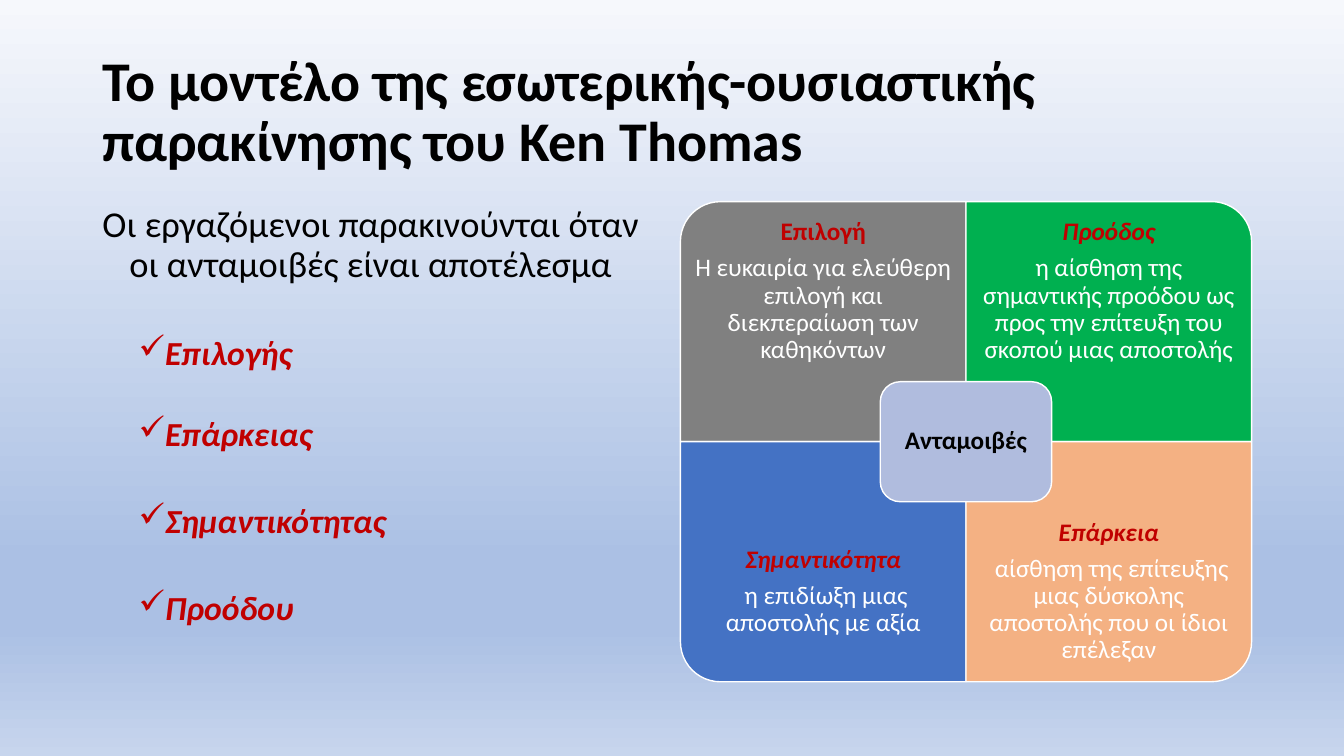
import pptx
import pptx.util
import pptx.dml.color
import pptx.enum.shapes
import pptx.enum.text
import pptx.oxml
import pptx.oxml.ns

Pt = pptx.util.Pt
SHAPE = pptx.enum.shapes.MSO_SHAPE
ALIGN = pptx.enum.text.PP_ALIGN
ANCHOR = pptx.enum.text.MSO_ANCHOR

TITLE = "Το µοντέλο της εσωτερικής-ουσιαστικής παρακίνησης του Ken Thomas"
LEAD = "Οι εργαζόµενοι παρακινούνται όταν οι ανταµοιβές είναι αποτέλεσµα"
ITEMS = [("Επιλογής", 36.4), ("Επάρκειας", 32), ("Σηµαντικότητας", 36.4), ("Προόδου", 36.4)]
HUB = "Ανταμοιβές"
PARTS = [
    ("Επιλογή", "Η ευκαιρία για ελεύθερη επιλογή και διεκπεραίωση των καθηκόντων", False, "808080", 270),
    ("Προόδος", "η αίσθηση της σηµαντικής προόδου ως προς την επίτευξη του σκοπού µιας αποστολής", True, "00B050", 0),
    ("Σηµαντικότητα", " η επιδίωξη µιας αποστολής µε αξία", True, "4472C4", 180),
    ("Επάρκεια", " αίσθηση της επίτευξης µιας δύσκολης αποστολής που οι ίδιοι επέλεξαν", True, "F4B183", 90),
]
THEME = {
    "font": "Calibri", "dark": "000000", "light": "FFFFFF", "red": "C00000", "hub": "B0BCDE",
    "title": 40, "lead": 26, "item": 24, "part": 18,
    "back": [(0, "F6F8FC"), (74, "ABC0E4"), (83, "ABC0E4"), (100, "C7D5ED")],
}
LEFT, TOP, WIDE, HIGH = 486, 144, 204, 171.5


def paint(fill, tone):
    fill.solid()
    fill.fore_color.rgb = pptx.dml.color.RGBColor.from_string(tone)


def write(frame, text, size, tone="dark", bold=False, slant=False,
          align=ALIGN.CENTER, before=0, after=0, mark=None):
    para = frame.paragraphs[0]
    if para.runs:
        para = frame.add_paragraph()
    para.alignment = align
    para.line_spacing = 0.9
    para.space_before, para.space_after = Pt(before), Pt(after)
    run = para.add_run()
    run.text = text
    font = run.font
    font.name, font.size = THEME["font"], Pt(THEME[size])
    font.bold, font.italic = bold, slant
    font.color.rgb = pptx.dml.color.RGBColor.from_string(THEME[tone])
    if mark:
        props = para._p.get_or_add_pPr()
        props.set("marL", str(Pt(54)))
        props.set("indent", str(Pt(-18)))
        bullet = pptx.oxml.parse_xml(f'<a:buChar {pptx.oxml.ns.nsdecls("a")} char="{mark}"/>')
        props.append(bullet)


def setup(frame, side, edge, anchor):
    frame.word_wrap = True
    frame.vertical_anchor = anchor
    frame.margin_left = frame.margin_right = Pt(side)
    frame.margin_top = frame.margin_bottom = Pt(edge)
    return frame


def add_box(slide, area, side=7.2, edge=3.6, anchor=ANCHOR.MIDDLE):
    box = slide.shapes.add_textbox(*map(Pt, area))
    return setup(box.text_frame, side, edge, anchor)


def add_tile(slide, kind, mid, size, tone, turn=0):
    (x, y), (wide, high) = mid, size
    if turn % 180:
        wide, high = high, wide
    tile = slide.shapes.add_shape(kind, Pt(x - wide / 2), Pt(y - high / 2), Pt(wide), Pt(high))
    tile.rotation = turn
    tile.shadow.inherit = False
    paint(tile.fill, tone)
    paint(tile.line.fill, THEME["light"])
    tile.line.width = Pt(1)
    return tile


def add_back(slide):
    fill = slide.background.fill
    fill.gradient()
    fill.gradient_angle = 270
    names = pptx.oxml.ns
    stops = slide.background._cSld.find(".//" + names.qn("a:gsLst"))
    for stop in list(stops):
        stops.remove(stop)
    for place, tone in THEME["back"]:
        stops.append(pptx.oxml.parse_xml(
            f'<a:gs {names.nsdecls("a")} pos="{place * 1000}"><a:srgbClr val="{tone}"/></a:gs>'))


def add_grid(slide):
    for index, (head, body, slant, tone, turn) in enumerate(PARTS):
        row, col = divmod(index, 2)
        x, y = LEFT + col * WIDE, TOP + row * HIGH
        add_tile(slide, SHAPE.ROUND_1_RECTANGLE, (x + WIDE / 2, y + HIGH / 2), (WIDE, HIGH), tone, turn)
        frame = add_box(slide, (x, y + row * HIGH / 4, WIDE, HIGH * 0.75), 10, 10)
        write(frame, head, "part", "red", bold=True, slant=slant, after=6.3)
        write(frame, body, "part", "light")
    hub = add_tile(slide, SHAPE.ROUNDED_RECTANGLE, (LEFT + WIDE, TOP + HIGH),
                   (WIDE * 0.6, HIGH / 2), THEME["hub"])
    write(setup(hub.text_frame, 5, 5, ANCHOR.MIDDLE), HUB, "part", bold=True)


def main():
    deck = pptx.Presentation()
    deck.slide_width, deck.slide_height = Pt(960), Pt(540)
    slide = deck.slides.add_slide(deck.slide_layouts[6])
    add_back(slide)
    write(add_box(slide, (66, 28.8, 828, 104.4)), TITLE, "title", bold=True, align=ALIGN.LEFT)
    frame = add_box(slide, (56, 144, 418, 383), anchor=ANCHOR.TOP)
    write(frame, LEAD, "lead")
    for text, gap in ITEMS:
        write(frame, text, "item", "red", bold=True, slant=True,
              align=ALIGN.JUSTIFY, before=gap, mark="✓")
    add_grid(slide)
    deck.save("out.pptx")


if __name__ == "__main__":
    main()
